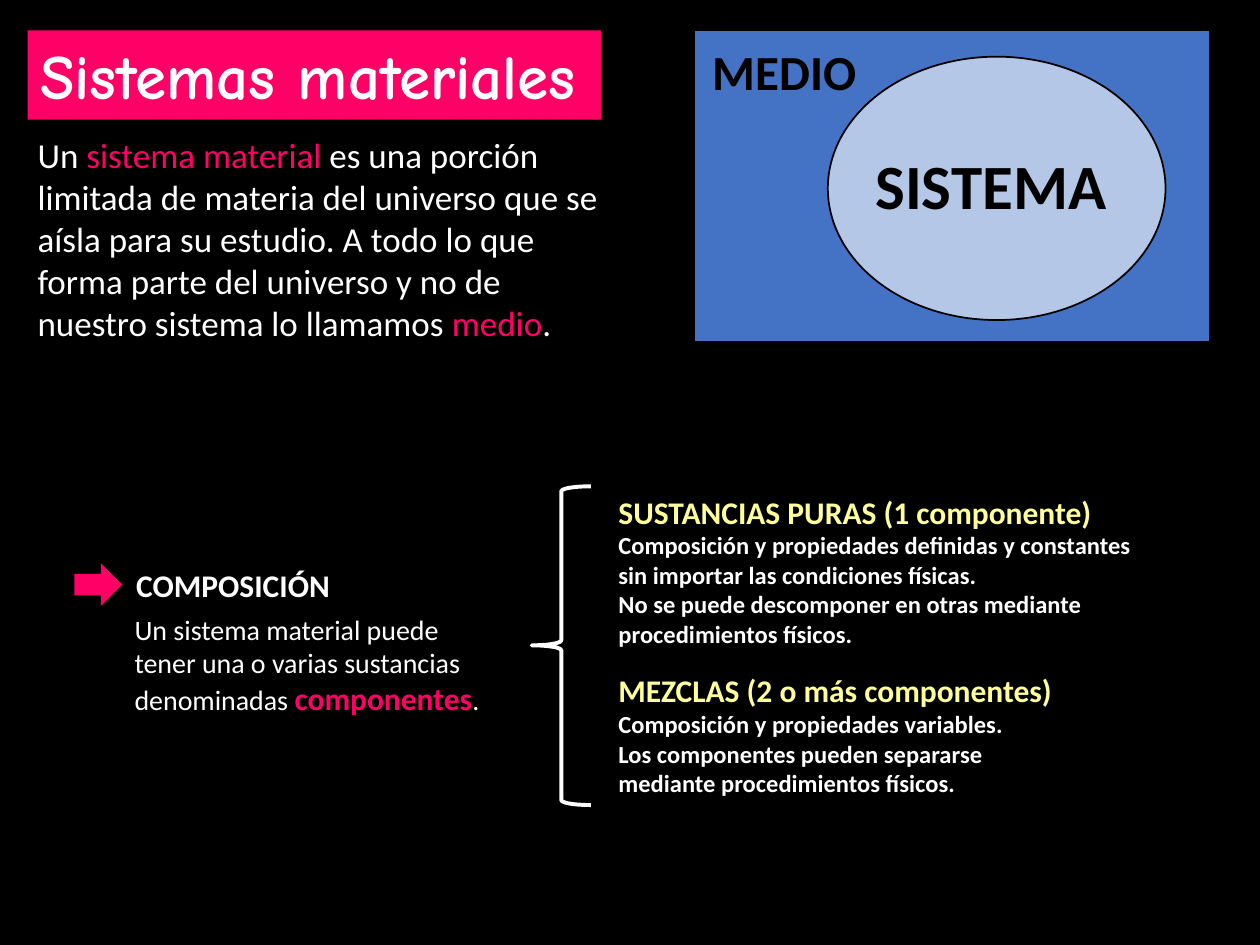
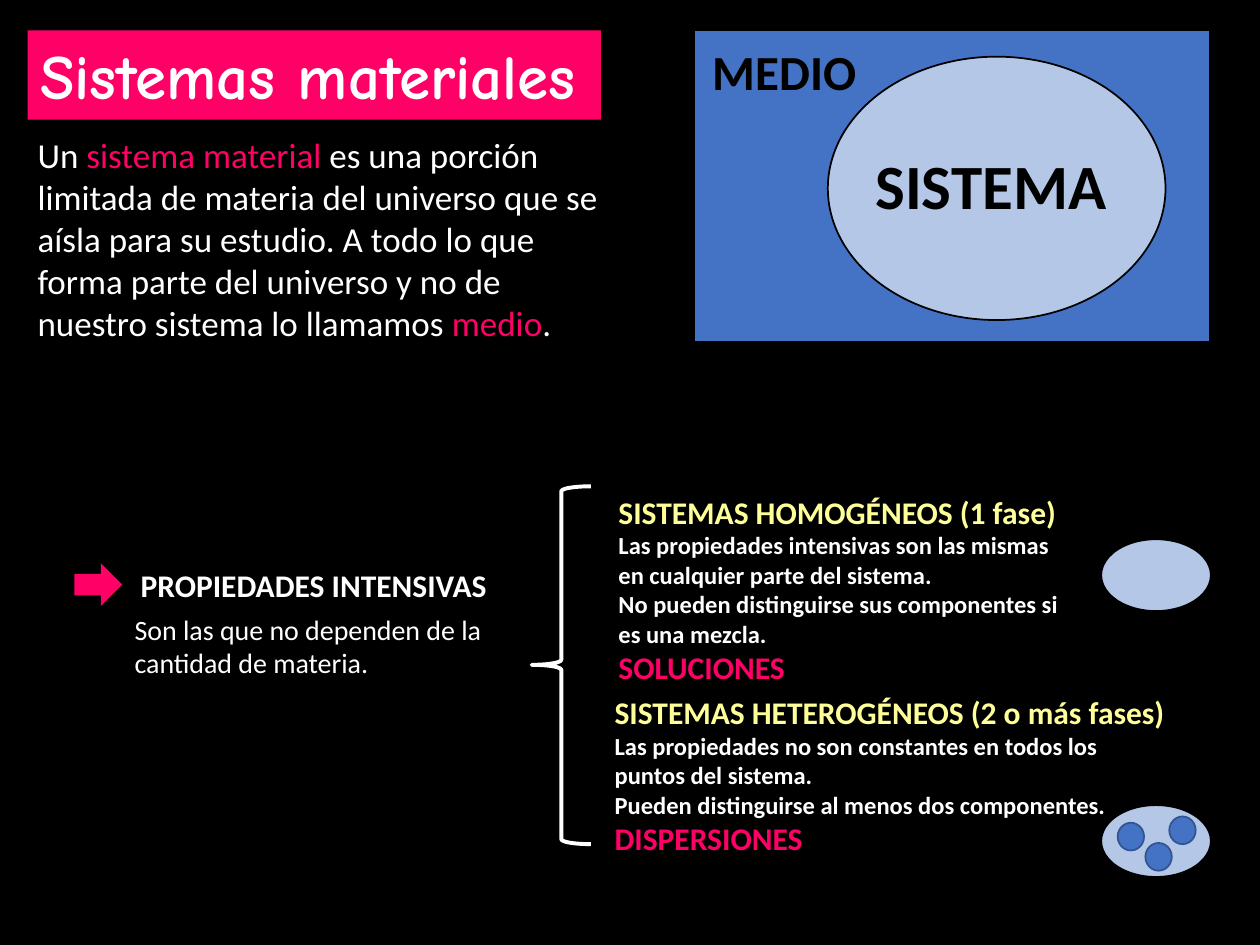
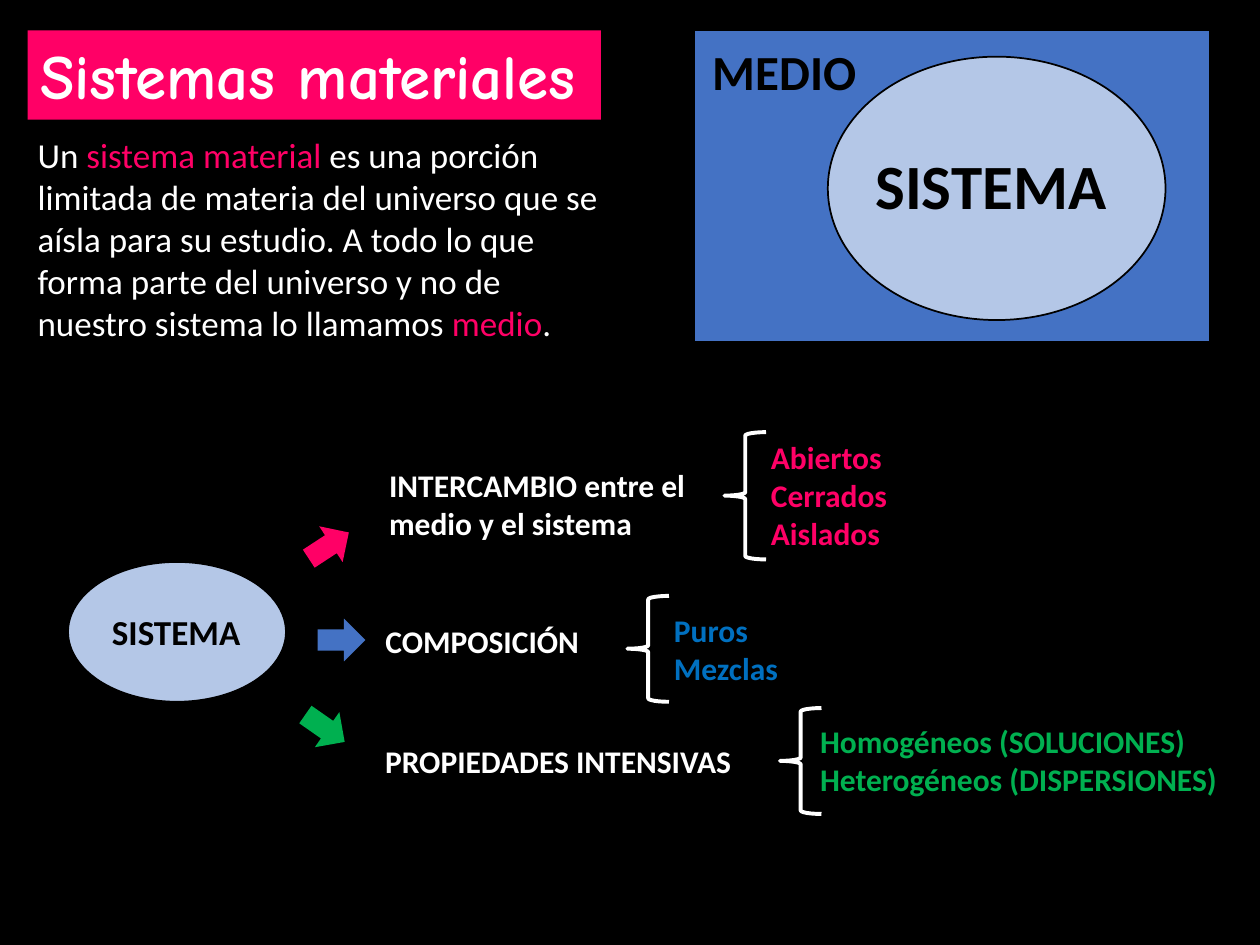
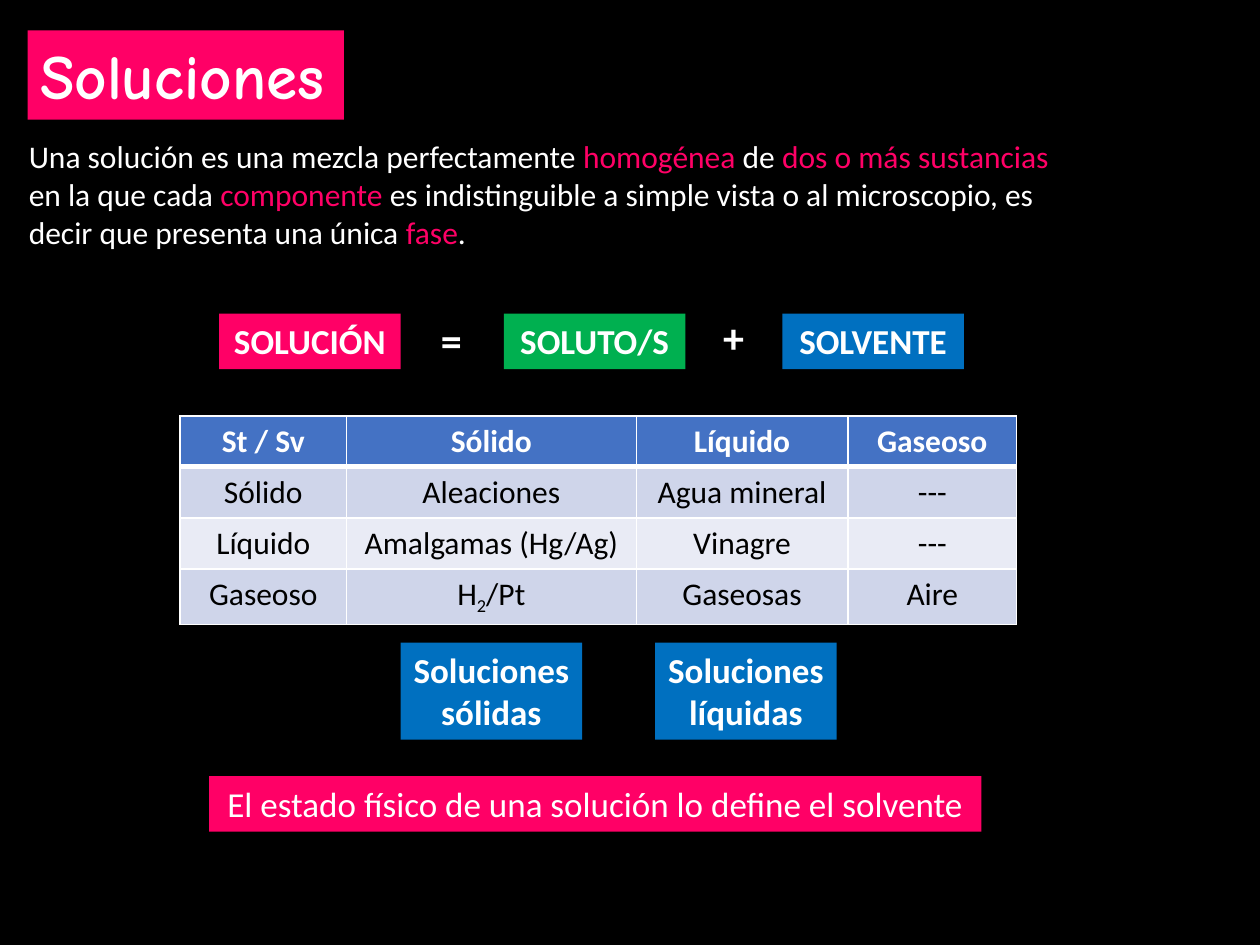
"""Build four slides on material systems and solutions."""
from dataclasses import dataclass
from typing import NamedTuple

from lxml.etree import SubElement
from pptx import Presentation
from pptx.dml.color import RGBColor
from pptx.enum.shapes import MSO_SHAPE
from pptx.enum.text import MSO_ANCHOR, MSO_AUTO_SIZE, PP_ALIGN
from pptx.oxml.ns import qn
from pptx.util import Inches, Pt


@dataclass(frozen=True)
class Theme:
    black: str = "000000"
    white: str = "FFFFFF"
    pink: str = "FF0066"
    yellow: str = "FFFF99"
    green: str = "00B050"
    blue: str = "0070C0"
    medium: str = "4472C4"
    system: str = "B4C7E7"
    particle_edge: str = "325491"
    bands: tuple = ("CFD5EA", "E9EBF5")
    body_font: str = "Calibri"
    title_font: str = "Comic Neue"
    title: int = 36
    label: int = 28
    sign: int = 24
    lead: int = 20
    heading: int = 18
    body: int = 16
    detail: int = 14


THEME = Theme()


class Style(NamedTuple):
    size: int
    color: str = THEME.white
    bold: bool = False
    font: str = THEME.body_font
    subscript: bool = False


TITLE = Style(THEME.title, bold=True, font=THEME.title_font)
LEAD = Style(THEME.lead)
LEAD_KEY = Style(THEME.lead, THEME.pink)
INTRO = Style(THEME.heading)
INTRO_KEY = Style(THEME.heading, THEME.pink)
BODY = Style(THEME.body)
TOPIC = Style(THEME.heading, bold=True)
KEY = Style(THEME.heading, THEME.pink, True)
CLASS = Style(THEME.heading, THEME.yellow, True)
DETAIL = Style(THEME.detail, bold=True)
TAG = Style(THEME.lead, bold=True)
SIGN = Style(THEME.sign, bold=True)
CELL = Style(THEME.heading, THEME.black)
CELL_SUB = CELL._replace(subscript=True)

SYSTEM_INTRO = [[
    ("Un ", LEAD), ("sistema material ", LEAD_KEY),
    ("es una porción limitada de materia del universo que se aísla para su estudio. "
     "A todo lo que forma parte del universo y no de nuestro sistema lo llamamos ", LEAD),
    ("medio", LEAD_KEY), (".", LEAD),
]]

CRITERIA = [
    {
        "topic": "COMPOSICIÓN",
        "topic_width": 1.76,
        "explanation": [[
            ("Un sistema material puede tener una o varias sustancias denominadas ", BODY),
            ("componentes", KEY), (".", BODY),
        ]],
        "explanation_height": 0.94,
        "brace_height": 2.53,
        "classes": [
            ((4.81, 3.86, 4.45, 1.35), [
                ("SUSTANCIAS PURAS (1 componente)", CLASS),
                ("Composición y propiedades definidas y constantes "
                 "sin importar las condiciones físicas.", DETAIL),
                ("No se puede descomponer en otras mediante procedimientos físicos.", DETAIL),
            ]),
            ((4.81, 5.28, 3.88, 1.11), [
                ("MEZCLAS (2 o más componentes)", CLASS),
                ("Composición y propiedades variables.", DETAIL),
                ("Los componentes pueden separarse mediante procedimientos físicos.", DETAIL),
            ]),
        ],
        "phases": [],
    },
    {
        "topic": "PROPIEDADES INTENSIVAS",
        "topic_width": 3.04,
        "explanation": [[("Son las que no dependen de la cantidad de materia.", BODY)]],
        "explanation_height": 0.64,
        "brace_height": 2.84,
        "classes": [
            ((4.81, 3.86, 3.85, 1.65), [
                ("SISTEMAS HOMOGÉNEOS (1 fase)", CLASS),
                ("Las propiedades intensivas son las mismas "
                 "en cualquier parte del sistema.", DETAIL),
                ("No pueden distinguirse sus componentes si es una mezcla.", DETAIL),
                ("SOLUCIONES", KEY),
            ]),
            ((4.78, 5.45, 4.63, 1.41), [
                ("SISTEMAS HETEROGÉNEOS (2 o más fases)", CLASS),
                ("Las propiedades no son constantes en todos los puntos del sistema.", DETAIL),
                ("Pueden distinguirse al menos dos componentes.", DETAIL),
                ("DISPERSIONES", KEY),
            ]),
        ],
        "phases": [(4.28, []), (6.39, [(9.09, 6.69), (8.87, 6.53), (9.28, 6.48)])],
    },
]

BRANCHES = [
    {
        "topic": "INTERCAMBIO entre el medio y el sistema",
        "topic_area": (2.99, 3.65, 3.04, 0.71), "align": PP_ALIGN.LEFT,
        "arrow": (2.42, 4.16, 326.8, THEME.pink),
        "brace": (5.75, 3.43, 0.33, 1.01),
        "kinds": ["Abiertos", "Cerrados", "Aislados"],
        "kinds_area": (6.02, 3.43, 1.38, 1.01), "kinds_color": THEME.pink,
    },
    {
        "topic": "COMPOSICIÓN",
        "topic_area": (2.96, 4.89, 1.89, 0.4), "align": PP_ALIGN.LEFT,
        "arrow": (2.52, 4.91, 0, THEME.medium),
        "brace": (4.98, 4.73, 0.33, 0.84),
        "kinds": ["Puros", "Mezclas"],
        "kinds_area": (5.25, 4.8, 1.38, 0.71), "kinds_color": THEME.blue,
    },
    {
        "topic": "PROPIEDADES INTENSIVAS",
        "topic_area": (2.91, 5.84, 3.04, 0.4), "align": PP_ALIGN.CENTER,
        "arrow": (2.39, 5.61, 34.9, THEME.green),
        "brace": (6.19, 5.62, 0.33, 0.84),
        "kinds": ["Homogéneos (SOLUCIONES)", "Heterogéneos (DISPERSIONES)"],
        "kinds_area": (6.41, 5.68, 3.35, 0.71), "kinds_color": THEME.green,
    },
]

SOLUTION_INTRO = [[
    ("Una solución es una mezcla perfectamente ", INTRO), ("homogénea", INTRO_KEY),
    (" de ", INTRO), ("dos o más sustancias ", INTRO_KEY),
    ("en la que cada ", INTRO), ("componente", INTRO_KEY),
    (" es indistinguible a simple vista o al microscopio, "
     "es decir que presenta una única ", INTRO),
    ("fase", INTRO_KEY), (".", INTRO),
]]
TAGS = [
    (1.74, 2.49, 0.44, THEME.pink, ["SOLUCIÓN"]),
    (4, 2.49, 0.44, THEME.green, ["SOLUTO/S"]),
    (6.21, 2.49, 0.44, THEME.blue, ["SOLVENTE"]),
    (3.18, 5.1, 0.77, THEME.blue, ["Soluciones", "sólidas"]),
    (5.2, 5.1, 0.77, THEME.blue, ["Soluciones", "líquidas"]),
]
SIGNS = [("=", 3.4, 2.45), ("+", 5.64, 2.42)]
CONCLUSION = "El estado físico de una solución lo define el solvente"
STATE_COLUMNS = [1.32, 2.3, 1.68, 1.34]
STATES = [
    ["St / Sv", "Sólido", "Líquido", "Gaseoso"],
    ["Sólido", "Aleaciones", "Agua mineral", "---"],
    ["Líquido", "Amalgamas (Hg/Ag)", "Vinagre", "---"],
    ["Gaseoso", [("H", CELL), ("2", CELL_SUB), ("/Pt", CELL)], "Gaseosas", "Aire"],
]


def rgb(color):
    return RGBColor.from_string(color)


def inches(area):
    return [Inches(length) for length in area]


def fill_text(frame, paragraphs, align=PP_ALIGN.LEFT):
    for index, runs in enumerate(paragraphs):
        paragraph = frame.add_paragraph() if index else frame.paragraphs[0]
        paragraph.alignment = align
        for words, style in runs:
            run = paragraph.add_run()
            run.text = words
            run.font.size = Pt(style.size)
            run.font.bold = style.bold
            run.font.name = style.font
            run.font.color.rgb = rgb(style.color)
            if style.subscript:
                run.font._element.set("baseline", "-25000")


def add_form(shapes, preset, area, fill=None, line=None, weight=1):
    form = shapes.add_shape(preset, *inches(area))
    form.shadow.inherit = False
    if fill:
        form.fill.solid()
        form.fill.fore_color.rgb = rgb(fill)
    else:
        form.fill.background()
    if line:
        form.line.color.rgb = rgb(line)
        form.line.width = Pt(weight)
    else:
        form.line.fill.background()
    return form


def add_text(shapes, area, paragraphs, align=PP_ALIGN.LEFT, fill=None, wrap=True):
    if fill:
        holder = add_form(shapes, MSO_SHAPE.RECTANGLE, area, fill)
    else:
        holder = shapes.add_textbox(*inches(area))
    frame = holder.text_frame
    frame.word_wrap = wrap
    frame.auto_size = MSO_AUTO_SIZE.SHAPE_TO_FIT_TEXT
    frame.vertical_anchor = MSO_ANCHOR.TOP
    fill_text(frame, paragraphs, align)


def add_oval(shapes, area, fill=THEME.system, line=THEME.black):
    add_form(shapes, MSO_SHAPE.OVAL, area, fill, line)


def add_arrow(shapes, left, top, rotation=0, color=THEME.pink):
    arrow = add_form(shapes, MSO_SHAPE.RIGHT_ARROW, (left, top, 0.38, 0.34), color)
    arrow.rotation = rotation


def add_brace(shapes, area):
    brace = add_form(shapes, MSO_SHAPE.LEFT_BRACE, area, line=THEME.white, weight=2.25)
    brace.adjustments[0] = 0.083
    brace.adjustments[1] = 0.499


def add_slide(deck, title, title_width):
    slide = deck.slides.add_slide(deck.slide_layouts[6])
    slide.background.fill.solid()
    slide.background.fill.fore_color.rgb = rgb(THEME.black)
    add_text(slide.shapes, (0.22, 0.24, title_width, 0.71), [[(title, TITLE)]], fill=THEME.pink)
    return slide.shapes


def add_system_slide(deck):
    shapes = add_slide(deck, "Sistemas materiales", 4.55)
    add_text(shapes, (0.2, 1.01, 4.8, 1.78), SYSTEM_INTRO)
    medium = shapes.add_group_shape().shapes
    add_form(medium, MSO_SHAPE.RECTANGLE, (5.51, 0.24, 4.09, 2.47), THEME.medium, THEME.black)
    add_text(medium, (5.56, 0.28, 1.35, 0.57),
             [[("MEDIO", Style(THEME.label, THEME.black, True))]], wrap=False)
    add_oval(shapes, (6.57, 0.45, 2.68, 2.09))
    add_text(shapes, (6.85, 1.11, 2.05, 0.71),
             [[("SISTEMA", Style(THEME.title, THEME.black, True))]], wrap=False)
    return shapes


def add_criterion_slide(deck, criterion):
    shapes = add_system_slide(deck)
    add_arrow(shapes, 0.59, 4.47)
    add_text(shapes, (0.97, 4.44, criterion["topic_width"], 0.4),
             [[(criterion["topic"], TOPIC)]], PP_ALIGN.CENTER)
    add_text(shapes, (0.97, 4.81, 3.04, criterion["explanation_height"]),
             criterion["explanation"])
    add_brace(shapes, (4.22, 3.86, 0.47, criterion["brace_height"]))
    for area, lines in criterion["classes"]:
        add_text(shapes, area, [[line] for line in lines])
    for top, particles in criterion["phases"]:
        add_oval(shapes, (8.74, top, 0.87, 0.57))
        for particle in particles:
            add_oval(shapes, (*particle, 0.21, 0.22), THEME.medium, THEME.particle_edge)


def add_summary_slide(deck):
    shapes = add_system_slide(deck)
    for branch in BRANCHES:
        add_arrow(shapes, *branch["arrow"])
        add_text(shapes, branch["topic_area"], [[(branch["topic"], TOPIC)]], branch["align"])
        add_brace(shapes, branch["brace"])
        kind_style = Style(THEME.heading, branch["kinds_color"], True)
        add_text(shapes, branch["kinds_area"], [[(kind, kind_style)] for kind in branch["kinds"]])
    root = shapes.add_group_shape().shapes
    add_oval(root, (0.54, 4.46, 1.73, 1.11))
    add_text(root, (0.79, 4.8, 1.26, 0.44), [[("SISTEMA", Style(THEME.lead, THEME.black, True))]])


def add_borders(cell, top, bottom):
    properties = cell._tc.get_or_add_tcPr()
    for side, weight in (("L", 1), ("R", 1), ("T", top), ("B", bottom)):
        border = SubElement(properties, qn(f"a:ln{side}"), w=str(Pt(weight)))
        SubElement(SubElement(border, qn("a:solidFill")), qn("a:srgbClr"), val=THEME.white)


def add_states(shapes):
    area = (1.43, 3.3, sum(STATE_COLUMNS), 1.62)
    table = shapes.add_table(len(STATES), len(STATE_COLUMNS), *inches(area)).table
    for column, width in zip(table.columns, STATE_COLUMNS):
        column.width = Inches(width)
    for index, (row, states) in enumerate(zip(table.rows, STATES)):
        for cell, state in zip(row.cells, states):
            add_borders(cell, 3 if index == 1 else 1, 1 if index else 3)
            cell.fill.solid()
            cell.fill.fore_color.rgb = rgb(THEME.bands[(index - 1) % 2] if index else THEME.medium)
            runs = [(state, CELL if index else TOPIC)] if isinstance(state, str) else state
            fill_text(cell.text_frame, [runs], PP_ALIGN.CENTER)


def add_solution_slide(deck):
    shapes = add_slide(deck, "Soluciones", 2.51)
    add_text(shapes, (0.13, 1.04, 8.42, 1.01), SOLUTION_INTRO)
    add_states(shapes)
    for left, top, height, color, lines in TAGS:
        add_text(shapes, (left, top, 1.44, height), [[(line, TAG)] for line in lines],
                 PP_ALIGN.CENTER, color)
    for sign, left, top in SIGNS:
        add_text(shapes, (left, top, 0.37, 0.5), [[(sign, SIGN)]], wrap=False)
    add_text(shapes, (1.66, 6.16, 6.13, 0.44), [[(CONCLUSION, LEAD)]],
             PP_ALIGN.CENTER, THEME.pink)


def main():
    deck = Presentation()
    deck.slide_width, deck.slide_height = Inches(10), Inches(7.5)
    for criterion in CRITERIA:
        add_criterion_slide(deck, criterion)
    add_summary_slide(deck)
    add_solution_slide(deck)
    deck.save("out.pptx")


if __name__ == "__main__":
    main()
